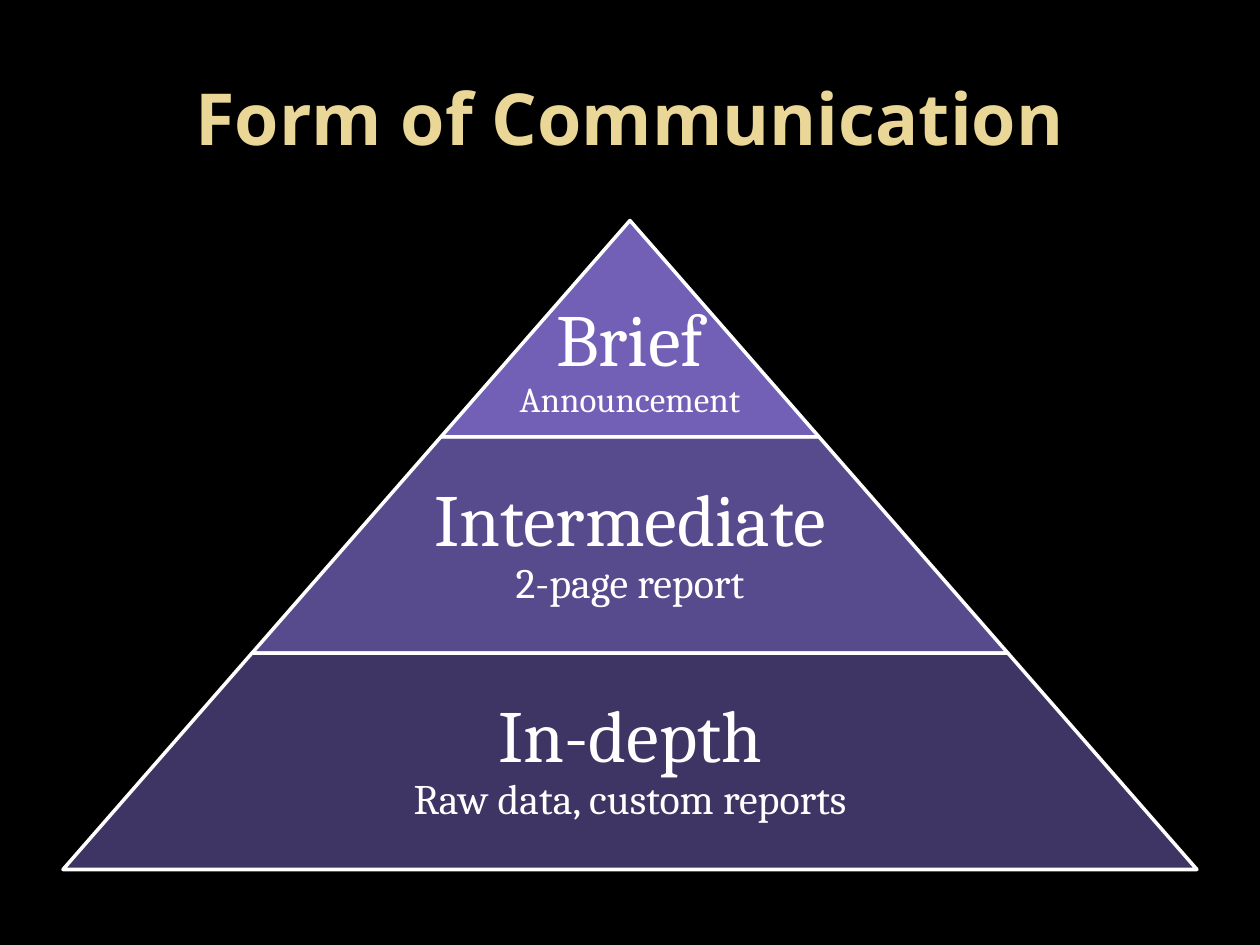
from lxml import etree
from pptx import Presentation
from pptx.dml.color import RGBColor
from pptx.enum.shapes import MSO_SHAPE
from pptx.enum.text import MSO_ANCHOR, PP_ALIGN
from pptx.oxml.ns import qn
from pptx.util import Inches, Pt

TRAPEZOID = MSO_SHAPE.TRAPEZOID
MIDDLE = MSO_ANCHOR.MIDDLE
CENTER = PP_ALIGN.CENTER

COLORS = {"background": "000000", "title": "EAD696", "band": "7E6BC9", "white": "FFFFFF"}
TITLE_FONT = "Noto Sans"
BODY_FONT = "Cambria"

# Pyramid geometry
SLIDE_W = 10
TOP = 1.75
BAND_H = 1.717
STEP_W = 3

# Heading, detail, detail size, opacity %, text width share, side inset, top inset
BANDS = [
    ("Brief", "Announcement", 20, 90, 1, 0.03, 0.55),
    ("Intermediate", "2-page report", 24, 70, 0.65, 0.06, 0.06),
    ("In-depth", "Raw data, custom reports", 24, 50, 0.65, 0.06, 0.06),
]


def rgb(name):
    return RGBColor.from_string(COLORS[name])


class Deck:
    def __init__(self):
        self.prs = Presentation()
        self.prs.slide_width = Inches(SLIDE_W)
        self.prs.slide_height = Inches(7.5)
        self.slide = self.prs.slides.add_slide(self.prs.slide_layouts[5])
        fill = self.slide.background.fill
        fill.solid()
        fill.fore_color.rgb = rgb("background")

    def title(self, text):
        sp = self.slide.shapes.title
        sp.left, sp.top, sp.width, sp.height = (Inches(v) for v in (0.5, 0.3, 9, 1.25))
        tf = sp.text_frame
        tf.text = text
        tf.vertical_anchor = MIDDLE
        p = tf.paragraphs[0]
        p.alignment = CENTER
        p.font.name, p.font.size, p.font.bold = TITLE_FONT, Pt(41), True
        p.font.color.rgb = rgb("title")

    def group(self):
        return self.slide.shapes.add_group_shape()

    def band(self, group, top, width, opacity):
        sp = group.shapes.add_shape(TRAPEZOID, Inches((SLIDE_W - width) / 2), Inches(top),
                                    Inches(width), Inches(BAND_H))
        # Every band narrows by one step, half on each side
        sp.adjustments[0] = STEP_W / 2 / BAND_H
        sp.shadow.inherit = False
        sp.fill.solid()
        sp.fill.fore_color.rgb = rgb("band")
        color = sp.fill._xPr.find(qn("a:solidFill"))[0]
        etree.SubElement(color, qn("a:alpha")).set("val", str(opacity * 1000))
        sp.line.color.rgb = rgb("white")
        sp.line.width = Pt(2)

    def label(self, group, top, width, heading, detail, detail_size, inset, top_inset):
        sp = group.shapes.add_textbox(Inches((SLIDE_W - width) / 2), Inches(top),
                                      Inches(width), Inches(BAND_H))
        tf = sp.text_frame
        tf.word_wrap = True
        tf.vertical_anchor = MIDDLE
        tf.margin_left = tf.margin_right = tf.margin_bottom = Inches(inset)
        tf.margin_top = Inches(top_inset)
        p = tf.paragraphs[0]
        p.alignment = CENTER
        p.line_spacing = 0.9
        p.font.name = BODY_FONT
        p.font.color.rgb = rgb("white")
        r = p.add_run()
        r.text, r.font.size = heading, Pt(42)
        p.add_line_break()
        r = p.add_run()
        r.text, r.font.size = detail, Pt(detail_size)


def main():
    deck = Deck()
    deck.title("Form of Communication")

    # Pyramid, from the tip down
    pyramid = deck.group()
    for i, (heading, detail, size, opacity, share, inset, top_inset) in enumerate(BANDS):
        top = TOP + i * BAND_H
        width = STEP_W * (i + 1)
        deck.band(pyramid, top, width, opacity)
        deck.label(pyramid, top, width * share, heading, detail, size, inset, top_inset)

    deck.prs.save("out.pptx")


if __name__ == "__main__":
    main()
